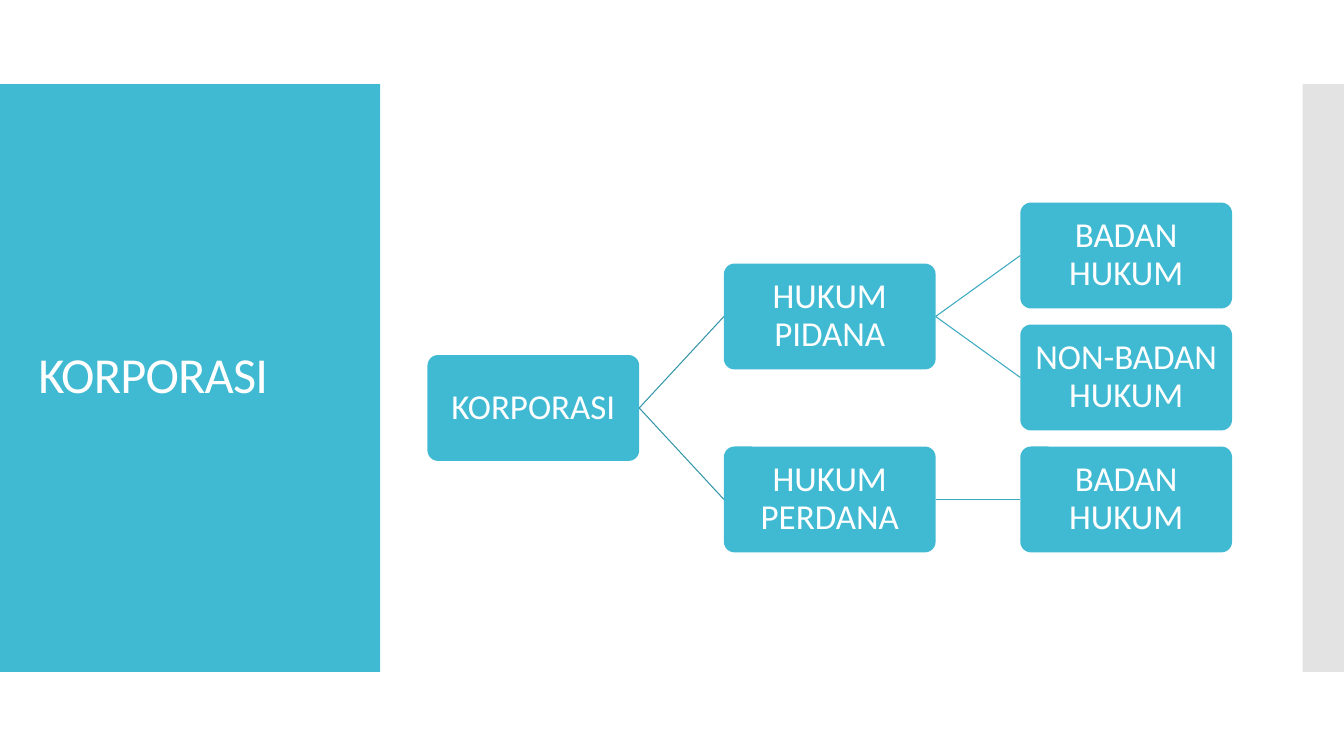
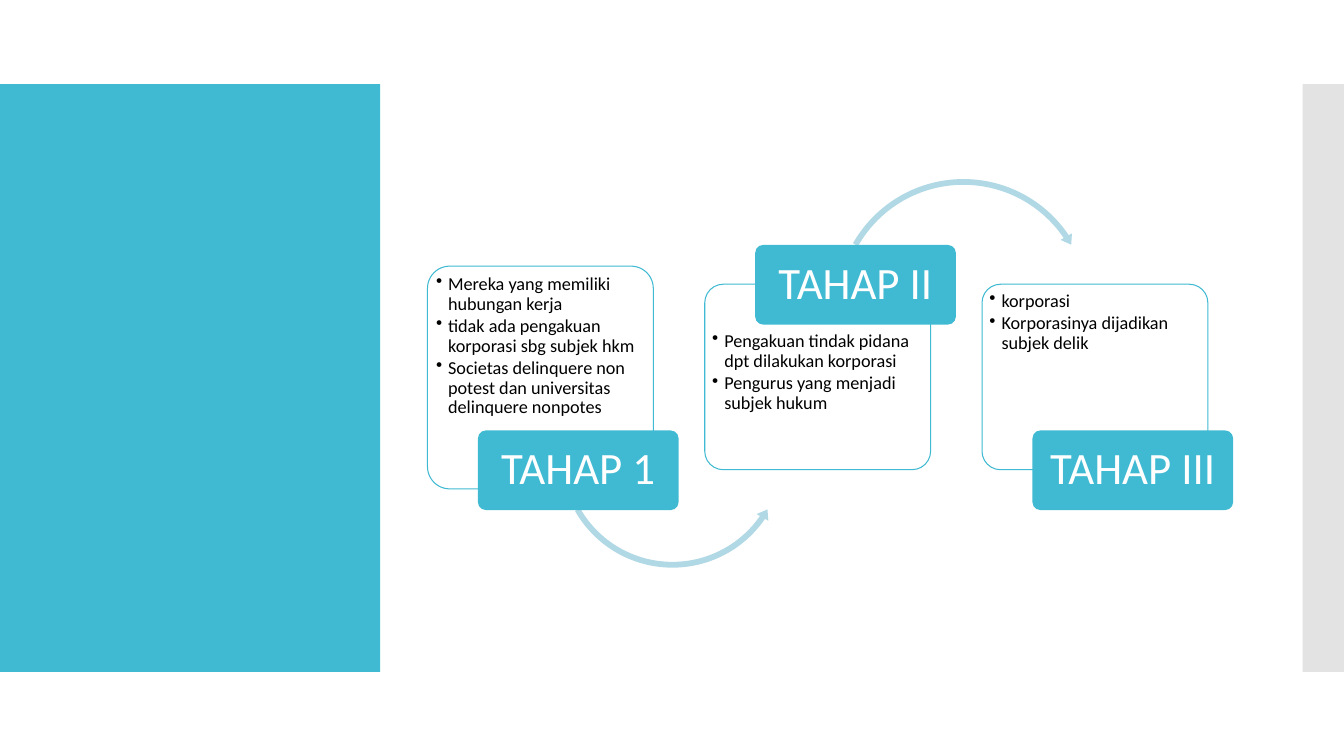
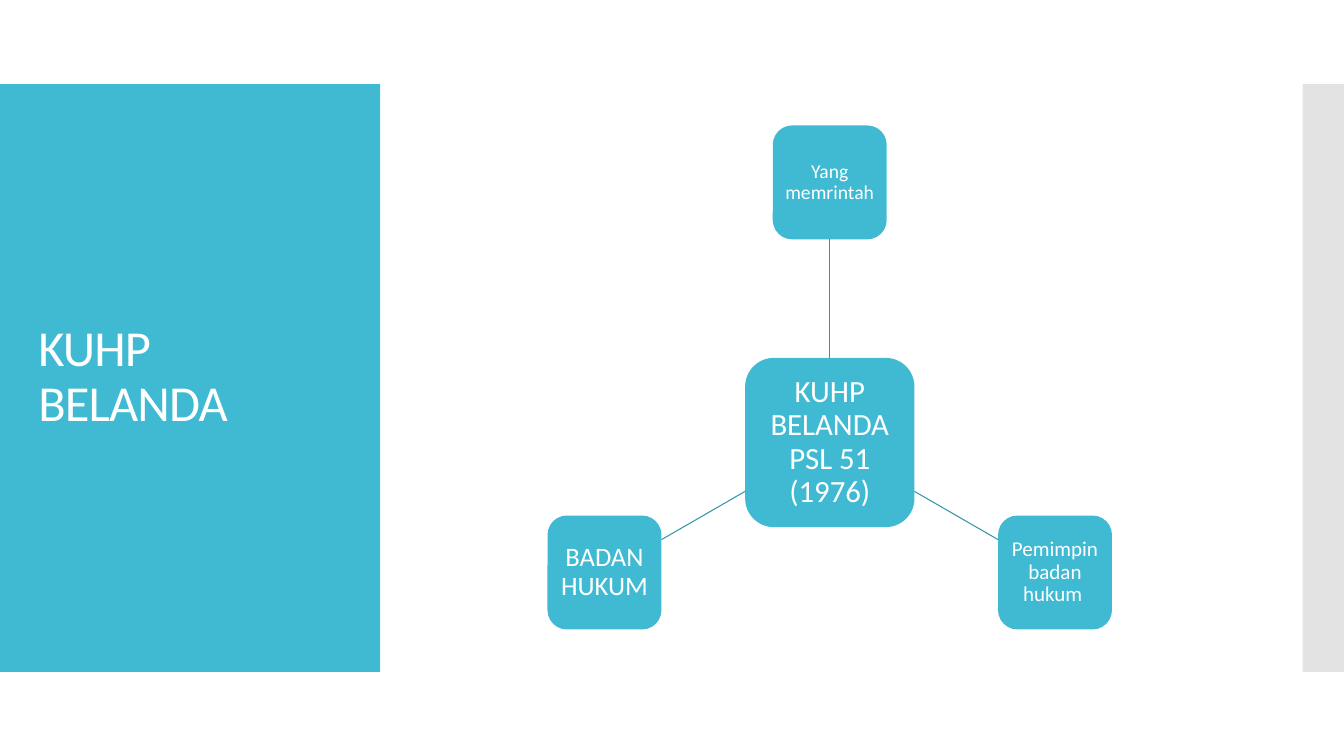
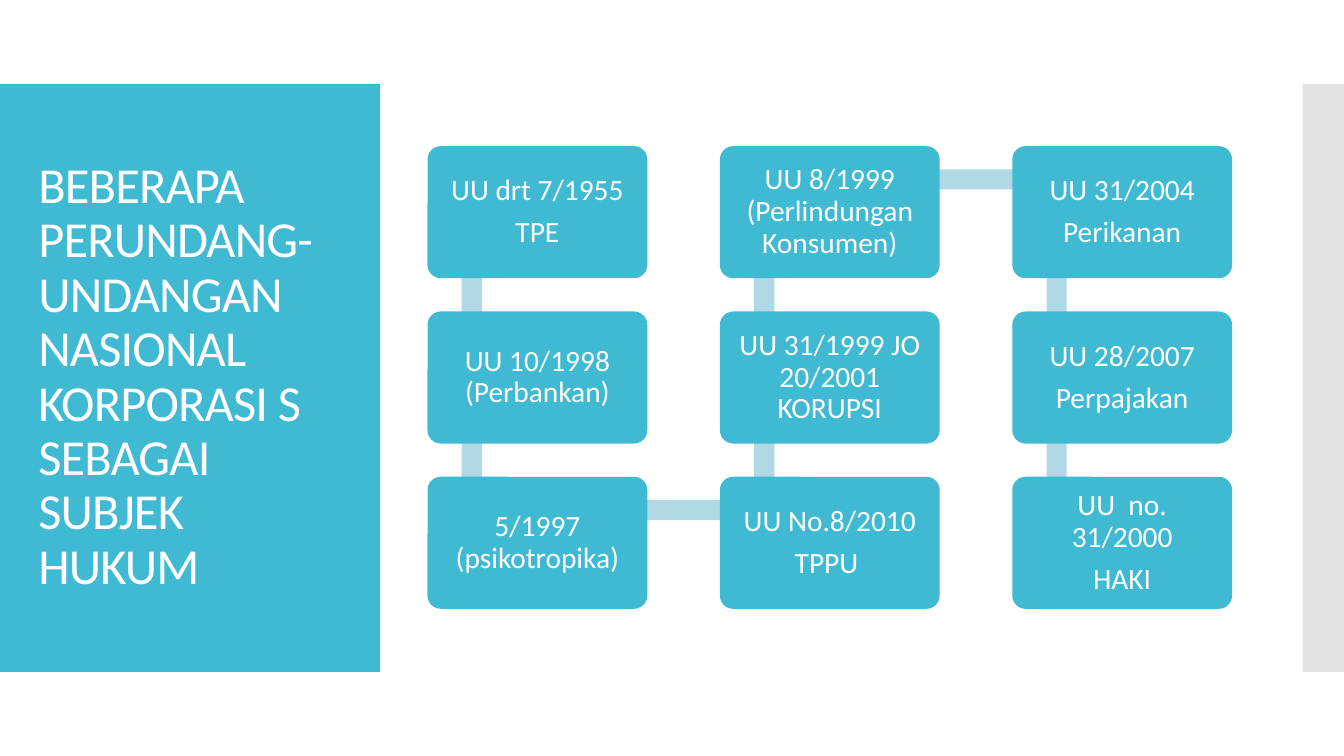
"""Build four slides on corporations as subjects of criminal law."""
from dataclasses import dataclass
from math import cos, radians, sin

from lxml import etree
from pptx import Presentation
from pptx.dml.color import RGBColor
from pptx.enum.shapes import MSO_CONNECTOR, MSO_SHAPE
from pptx.enum.text import MSO_ANCHOR, MSO_AUTO_SIZE, PP_ALIGN
from pptx.oxml.ns import qn
from pptx.presentation import Presentation as Deck
from pptx.shapes.autoshape import Shape
from pptx.shapes.connector import Connector
from pptx.slide import Slide, SlideLayout
from pptx.text.text import TextFrame
from pptx.util import Inches, Pt

RECT, ROUND = MSO_SHAPE.RECTANGLE, MSO_SHAPE.ROUNDED_RECTANGLE
ARC_UNDER, ARC_OVER = MSO_SHAPE.LEFT_CIRCULAR_ARROW, MSO_SHAPE.CIRCULAR_ARROW
STRAIGHT = MSO_CONNECTOR.STRAIGHT
LEFT, CENTER = PP_ALIGN.LEFT, PP_ALIGN.CENTER
TOP, MIDDLE = MSO_ANCHOR.TOP, MSO_ANCHOR.MIDDLE
NO_FIT = MSO_AUTO_SIZE.NONE
SIDE_TOP, SIDE_LEFT, SIDE_BOTTOM, SIDE_RIGHT = range(4)

TEAL = RGBColor(0x40, 0xBA, 0xD2)
TEAL_MID = RGBColor(0x3A, 0xA9, 0xBF)
TEAL_DARK = RGBColor(0x33, 0x95, 0xA8)
PALE = RGBColor(0xB0, 0xD9, 0xE5)
GREY = RGBColor(0xC8, 0xC8, 0xC8)
WHITE = RGBColor(0xFF, 0xFF, 0xFF)
BLACK = RGBColor(0, 0, 0)

FONT = "Calibri"
SLIDE_W, SLIDE_H = 13.33, 7.5
BAND_TOP, BAND_H = SLIDE_H / 9, SLIDE_H * 7 / 9
CONTENT_X = 4.24


@dataclass(frozen=True)
class Band:
    left: float
    width: float
    color: RGBColor
    opacity: int = 100


@dataclass(frozen=True)
class Node:
    text: str
    col: int
    row: float
    parent: int | None = None


@dataclass(frozen=True)
class Arc:
    kind: MSO_SHAPE
    left: float
    top: float
    size: float
    adjustments: tuple[float, ...]


@dataclass(frozen=True)
class Stage:
    label: str
    label_top: float
    top: float
    height: float
    points: tuple[str, ...]
    text_top: float = 0.02
    arc: Arc | None = None


@dataclass(frozen=True)
class Satellite:
    text: str
    size: int
    angle: int
    inset: float


BANDS = (Band(0, 3.77, TEAL), Band(12.92, 0.42, GREY, 50))
TREE = (
    Node("KORPORASI", 0, 1.25),
    Node("HUKUM PIDANA", 1, 0.5, 0),
    Node("HUKUM PERDANA", 1, 2, 0),
    Node("BADAN HUKUM", 2, 0, 1),
    Node("NON-BADAN HUKUM", 2, 1, 1),
    Node("BADAN HUKUM", 2, 2, 2),
)
STAGES = (
    Stage("TAHAP 1", 4.27, 2.64, 2.21, (
        "Mereka yang memiliki hubungan kerja",
        "tidak ada pengakuan korporasi sbg subjek hkm",
        "Societas delinquere non potest dan universitas delinquere nonpotes",
    ), arc=Arc(ARC_UNDER, 5.52, 3.37, 2.3, (0.025, 2.967, 20.699, 90.221, 0.029))),
    Stage("TAHAP II", 2.43, 2.82, 1.84, (
        "Pengakuan tindak pidana dpt dilakukan korporasi",
        "Pengurus yang menjadi subjek hukum",
    ), 0.42, Arc(ARC_OVER, 8.26, 1.74, 2.59, (0.022, 2.623, 195.621, 125.755, 0.025))),
    Stage("TAHAP III", 4.27, 2.82, 1.84, (
        "korporasi",
        "Korporasinya dijadikan subjek delik",
    )),
)
SATELLITES = (
    Satellite("Yang memrintah", 14, -90, 0.04),
    Satellite("Pemimpin badan hukum ", 15, 30, 0.04),
    Satellite("BADAN HUKUM", 19, 150, 0.05),
)
LAWS = (
    ("UU drt 7/1955", "TPE"),
    ("UU 10/1998 (Perbankan)",),
    ("5/1997 (psikotropika)",),
    ("UU No.8/2010", "TPPU "),
    ("UU 31/1999 JO 20/2001 KORUPSI",),
    ("UU 8/1999 (Perlindungan Konsumen)",),
    ("UU 31/2004", "Perikanan"),
    ("UU 28/2007", "Perpajakan"),
    ("UU  no. 31/2000", "HAKI"),
)


def add_box(slide: Slide, kind: MSO_SHAPE, left: float, top: float, width: float,
            height: float, color: RGBColor, opacity: int = 100) -> Shape:
    """Add a flat filled shape without an outline."""
    sp = slide.shapes.add_shape(kind, *map(Inches, (left, top, width, height)))
    sp.shadow.inherit = False
    sp.fill.solid()
    sp.fill.fore_color.rgb = color
    sp.line.fill.background()
    if opacity < 100:
        rgb = sp._element.spPr.find(qn("a:solidFill"))[0]
        etree.SubElement(rgb, qn("a:alpha")).set("val", str(opacity * 1000))
    return sp


def set_margins(tf: TextFrame, across: float, down: float) -> None:
    """Set the side and the upper and lower insets of a text frame."""
    tf.margin_left = tf.margin_right = Inches(across)
    tf.margin_top = tf.margin_bottom = Inches(down)


def write(tf: TextFrame, lines: tuple[str, ...], size: int, color: RGBColor,
          align: PP_ALIGN = CENTER, anchor: MSO_ANCHOR = MIDDLE,
          after: float = 0.35, bullets: bool = False) -> None:
    """Fill a text frame with evenly formatted paragraphs."""
    tf.text = "\n".join(lines)
    tf.word_wrap = True
    tf.auto_size = NO_FIT
    tf.vertical_anchor = anchor
    for p in tf.paragraphs:
        if bullets:
            pPr = p._p.get_or_add_pPr()
            pPr.set("marL", str(Inches(0.12)))
            pPr.set("indent", str(-Inches(0.12)))
            etree.SubElement(pPr, qn("a:buChar")).set("char", "•")
        p.alignment = align
        p.line_spacing = 0.9
        p.space_after = Pt(round(size * after, 2))
        for r in p.runs:
            r.font.name = FONT
            r.font.size = Pt(size)
            r.font.color.rgb = color


def add_card(slide: Slide, lines: tuple[str, ...], left: float, top: float, width: float,
             height: float, size: int, across: float, down: float,
             corner: float = 0.1) -> Shape:
    """Add a teal rounded card with centred white text."""
    sp = add_box(slide, ROUND, left, top, width, height, TEAL)
    sp.adjustments[0] = corner
    set_margins(sp.text_frame, across, down)
    write(sp.text_frame, lines, size, WHITE)
    return sp


def add_line(slide: Slide, color: RGBColor, x1: float = 0, y1: float = 0,
             x2: float = 0, y2: float = 0) -> Connector:
    """Add a thin straight connector without a shadow."""
    line = slide.shapes.add_connector(STRAIGHT, *map(Inches, (x1, y1, x2, y2)))
    line.line.color.rgb = color
    line.line.width = Pt(0.75)
    etree.SubElement(line._element.spPr, qn("a:effectLst"))
    return line


def add_page(prs: Deck, layout: SlideLayout, title: str = "") -> Slide:
    """Add a slide with its title, or with no title placeholder."""
    slide = prs.slides.add_slide(layout)
    sp = slide.shapes.title
    if not title:
        sp._element.getparent().remove(sp._element)
        return slide
    write(sp.text_frame, (title,), 36, WHITE, LEFT, after=0)
    for r in sp.text_frame.paragraphs[0].runs:
        r._r.get_or_add_rPr().set("spc", "-60")
    return slide


def dress_layout(layout: SlideLayout, slide: Slide) -> None:
    """Place the shared title frame and bands on the layout."""
    title = layout.placeholders[0]
    title.left, title.top, title.width, title.height = map(Inches, (0.28, 1.23, 3.22, 5.03))
    for i, band in enumerate(BANDS):
        sp = add_box(slide, RECT, band.left, BAND_TOP, band.width, BAND_H,
                     band.color, band.opacity)
        layout.shapes._spTree.insert(2 + i, sp._element)


def draw_tree(slide: Slide) -> None:
    """Draw the tree of corporation types."""
    cards: list[Shape] = []
    for node in TREE:
        card = add_card(slide, (node.text,), CONTENT_X + 2.94 * node.col,
                        2.01 + 1.21 * node.row, 2.1, 1.05, 25, 0.02, 0.02)
        cards.append(card)
        if node.parent is not None:
            line = add_line(slide, TEAL_DARK if node.col == 1 else TEAL_MID)
            line.begin_connect(cards[node.parent], SIDE_RIGHT)
            line.end_connect(card, SIDE_LEFT)


def draw_stages(slide: Slide) -> None:
    """Draw the three stages with the arcs between them."""
    for i, stage in enumerate(STAGES):
        left = CONTENT_X + 2.75 * i
        panel = add_box(slide, ROUND, left, stage.top, 2.24, stage.height, WHITE, 90)
        panel.adjustments[0] = 0.1
        panel.line.color.rgb = TEAL
        panel.line.width = Pt(0.75)
        tf = panel.text_frame
        set_margins(tf, 0.02, 0.02)
        tf.margin_top = Inches(stage.text_top)
        write(tf, stage.points, 13, BLACK, LEFT, TOP, 0.15, True)
        if stage.arc:
            arc = stage.arc
            sp = add_box(slide, arc.kind, arc.left, arc.top, arc.size, arc.size, PALE)
            for j, value in enumerate(arc.adjustments):
                sp.adjustments[j] = value
        add_card(slide, (stage.label,), left + 0.5, stage.label_top, 1.99, 0.79,
                 32, 0.07, 0.04)


def draw_hub(slide: Slide) -> None:
    """Draw the hub and the satellites around it."""
    x, y, radius, hub_size, size = 8.23, 4.39, 2.58, 1.68, 1.13
    corner = 0.17
    hub = add_card(slide, ("KUHP BELANDA PSL 51 (1976)",), x - hub_size / 2,
                   y - hub_size / 2, hub_size, hub_size, 22, 0.06, 0.06, corner)
    for sat in SATELLITES:
        dx, dy = cos(radians(sat.angle)), sin(radians(sat.angle))
        reach = max(abs(dx), abs(dy))
        start, end = hub_size / 2 / reach, radius - size / 2 / reach
        card = add_card(slide, (sat.text,), x + radius * dx - size / 2,
                        y + radius * dy - size / 2, size, size, sat.size,
                        sat.inset, sat.inset, corner)
        line = add_line(slide, TEAL_DARK, x + start * dx, y + start * dy,
                        x + end * dx, y + end * dy)
        if sat.angle == -90:
            line.begin_connect(hub, SIDE_TOP)
            line.end_connect(card, SIDE_BOTTOM)


def draw_laws(slide: Slide) -> None:
    """Draw the laws as a path that winds down and up the columns."""
    rows, col_step, row_step, bar = 3, 2.9, 1.64, 0.2
    spots: list[tuple[float, float]] = []
    for i in range(len(LAWS)):
        col, row = divmod(i, rows)
        if col % 2:
            row = rows - 1 - row
        spots.append((CONTENT_X + col_step * col, 1.45 + row_step * row))
    for (x1, y1), (x2, y2) in zip(spots, spots[1:]):
        add_box(slide, RECT, min(x1, x2) + 0.34, min(y1, y2) + 0.23,
                abs(x2 - x1) + bar, abs(y2 - y1) + bar, PALE)
    for lines, (left, top) in zip(LAWS, spots):
        add_card(slide, lines, left, top, 2.18, 1.31, 21, 0.09, 0.09)


def main() -> None:
    """Build and save the presentation."""
    prs = Presentation()
    prs.slide_width, prs.slide_height = Inches(SLIDE_W), Inches(SLIDE_H)
    layout = prs.slide_layouts[5]
    tree = add_page(prs, layout, "KORPORASI")
    dress_layout(layout, tree)
    draw_tree(tree)
    draw_stages(add_page(prs, layout))
    draw_hub(add_page(prs, layout, "KUHP BELANDA"))
    draw_laws(add_page(prs, layout, "BEBERAPA PERUNDANG-UNDANGAN NASIONAL "
                                    "KORPORASI S SEBAGAI SUBJEK HUKUM"))
    prs.save("out.pptx")


if __name__ == "__main__":
    main()
